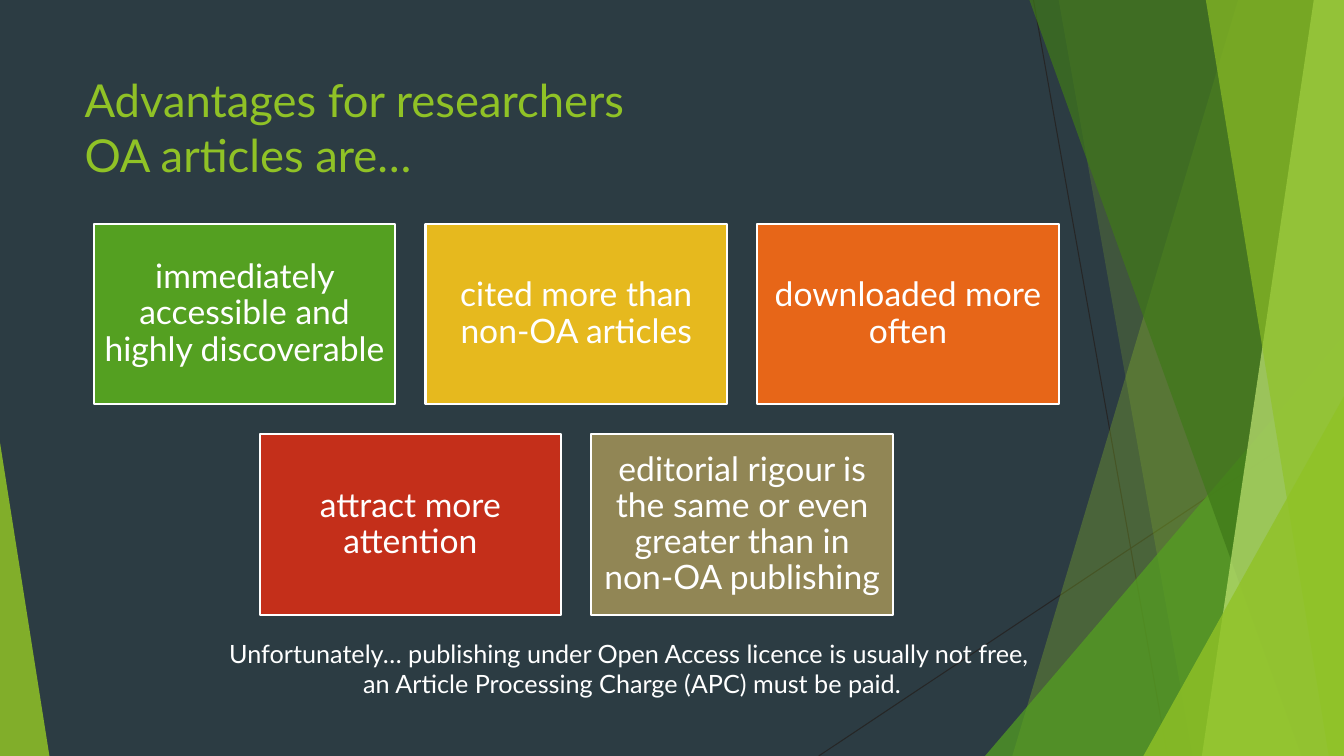
from lxml import etree
from pptx import Presentation, util as u
from pptx.dml.color import RGBColor
from pptx.enum import shapes, text
from pptx.oxml import ns

WIDTH, HEIGHT = 13.33, 7.5
FONT = "Lato"
BACKGROUND, LIME, WHITE, HAIRLINE = "2C3C43", "90C226", "FFFFFF", "262626"

TITLE = "Advantages for researchers\vOA articles are…"
FOOTNOTE = [
    "Unfortunately… publishing under Open Access licence is usually not free, ",
    "an Article Processing Charge (APC) must be paid.",
]
CARD_ROWS = [
    [("immediately accessible and highly discoverable", "54A021"),
     ("cited more than non-OA articles", "E6B91E"),
     ("downloaded more often", "E76618")],
    [("attract more attention", "C42F1A"),
     ("editorial rigour is the same or even greater than in non-OA publishing", "918655")],
]
CARD_WIDTH, CARD_HEIGHT, CARD_GAP = 2.99, 1.79, 0.3
CARDS_CENTER, CARDS_TOP = 5.715, 2.22

HAIRLINES = [(10.25, 0, 11.58, HEIGHT), (WIDTH, 4.03, 8.12, HEIGHT)]
# Bands reach the right edge: left edge at top, left edge at bottom, colour, opacity
# Wedges stand on the bottom edge: left, top, right, apex position, colour, opacity
FACETS = [
    ("band", (12.28, 10.04), LIME, 30),
    ("band", (10.5, 11.83), LIME, 20),
    ("wedge", (9.77, 3.33, WIDTH, 1), "54A021", 72),
    ("band", (10.21, 12.91), "3F7819", 70),
    ("band", (13.03, 11.92), "C0E474", 70),
    ("band", (11.96, 13.18), LIME, 65),
    ("wedge", (11.34, 3.93, WIDTH, 1), LIME, 80),
    ("wedge", (0, 4.39, 0.49, 0), LIME, 85),
]


def color(value):
    return RGBColor.from_string(value)


def paint(shape, fill, opacity=100, line=None):
    shape.shadow.inherit = False
    shape.fill.solid()
    shape.fill.fore_color.rgb = color(fill)
    if opacity < 100:
        tone = shape.fill._xPr.find(".//" + ns.qn("a:srgbClr"))
        etree.SubElement(tone, ns.qn("a:alpha"), val=str(opacity * 1000))
    if line:
        shape.line.color.rgb = color(line)
        shape.line.width = u.Pt(1.5)
    else:
        shape.line.fill.background()


def write(shape, lines, size, tone, frame_format, para_format):
    frame = shape.text_frame
    for name, value in {"word_wrap": True, **frame_format}.items():
        setattr(frame, name, value)
    frame.text = "\n".join(lines)
    for para in frame.paragraphs:
        for name, value in para_format.items():
            setattr(para, name, value)
        for span in para.runs:
            span.font.name, span.font.size = FONT, u.Pt(size)
            span.font.color.rgb = color(tone)


def add_hairline(page, ends):
    line = page.shapes.add_connector(
        shapes.MSO_CONNECTOR.STRAIGHT, *[u.Inches(v) for v in ends])
    line.line.color.rgb = color(HAIRLINE)
    line.line.width = u.Pt(0.75)
    etree.SubElement(line._element.spPr, ns.qn("a:effectLst"))


def add_band(page, top_x, bottom_x):
    corners = [(u.Inches(x), u.Inches(y)) for x, y in
               [(top_x, 0), (WIDTH, 0), (WIDTH, HEIGHT), (bottom_x, HEIGHT)]]
    builder = page.shapes.build_freeform(*corners[0])
    builder.add_line_segments(corners[1:], close=True)
    return builder.convert_to_shape()


def add_box(page, kind, left, top, width, height):
    place = [u.Inches(v) for v in (left, top, width, height)]
    if kind is None:
        return page.shapes.add_textbox(*place)
    return page.shapes.add_shape(kind, *place)


def add_wedge(page, left, top, right, apex):
    wedge = add_box(page, shapes.MSO_SHAPE.ISOSCELES_TRIANGLE,
                    left, top, right - left, HEIGHT - top)
    wedge.adjustments[0] = apex
    return wedge


def add_cards(page):
    centered = {"alignment": text.PP_ALIGN.CENTER, "line_spacing": 0.9}
    inset = u.Inches(0.09)
    frame_format = {"vertical_anchor": text.MSO_ANCHOR.MIDDLE,
                    "margin_left": inset, "margin_right": inset}
    for row, cards in enumerate(CARD_ROWS):
        row_width = len(cards) * (CARD_WIDTH + CARD_GAP) - CARD_GAP
        top = CARDS_TOP + row * (CARD_HEIGHT + CARD_GAP)
        for column, (label, fill) in enumerate(cards):
            left = CARDS_CENTER - row_width / 2 + column * (CARD_WIDTH + CARD_GAP)
            card = add_box(page, shapes.MSO_SHAPE.RECTANGLE,
                           left, top, CARD_WIDTH, CARD_HEIGHT)
            paint(card, fill, line=WHITE)
            write(card, [label], 24, WHITE, frame_format, centered)


def main():
    deck = Presentation()
    deck.slide_width, deck.slide_height = u.Inches(WIDTH), u.Inches(HEIGHT)
    page = deck.slides.add_slide(deck.slide_layouts[6])
    page.background.fill.solid()
    page.background.fill.fore_color.rgb = color(BACKGROUND)

    for ends in HAIRLINES:
        add_hairline(page, ends)
    makers = {"band": add_band, "wedge": add_wedge}
    for kind, geometry, fill, opacity in FACETS:
        paint(makers[kind](page, *geometry), fill, opacity)

    title = add_box(page, None, 0.74, 0.67, 9.4, 1.37)
    write(title, [TITLE], 32.4, LIME, {"vertical_anchor": text.MSO_ANCHOR.TOP}, {})
    add_cards(page)
    footnote = add_box(page, None, 1.86, 6.28, 8.82, 0.71)
    write(footnote, FOOTNOTE, 18, WHITE, {}, {"alignment": text.PP_ALIGN.CENTER})
    deck.save("out.pptx")


if __name__ == "__main__":
    main()
